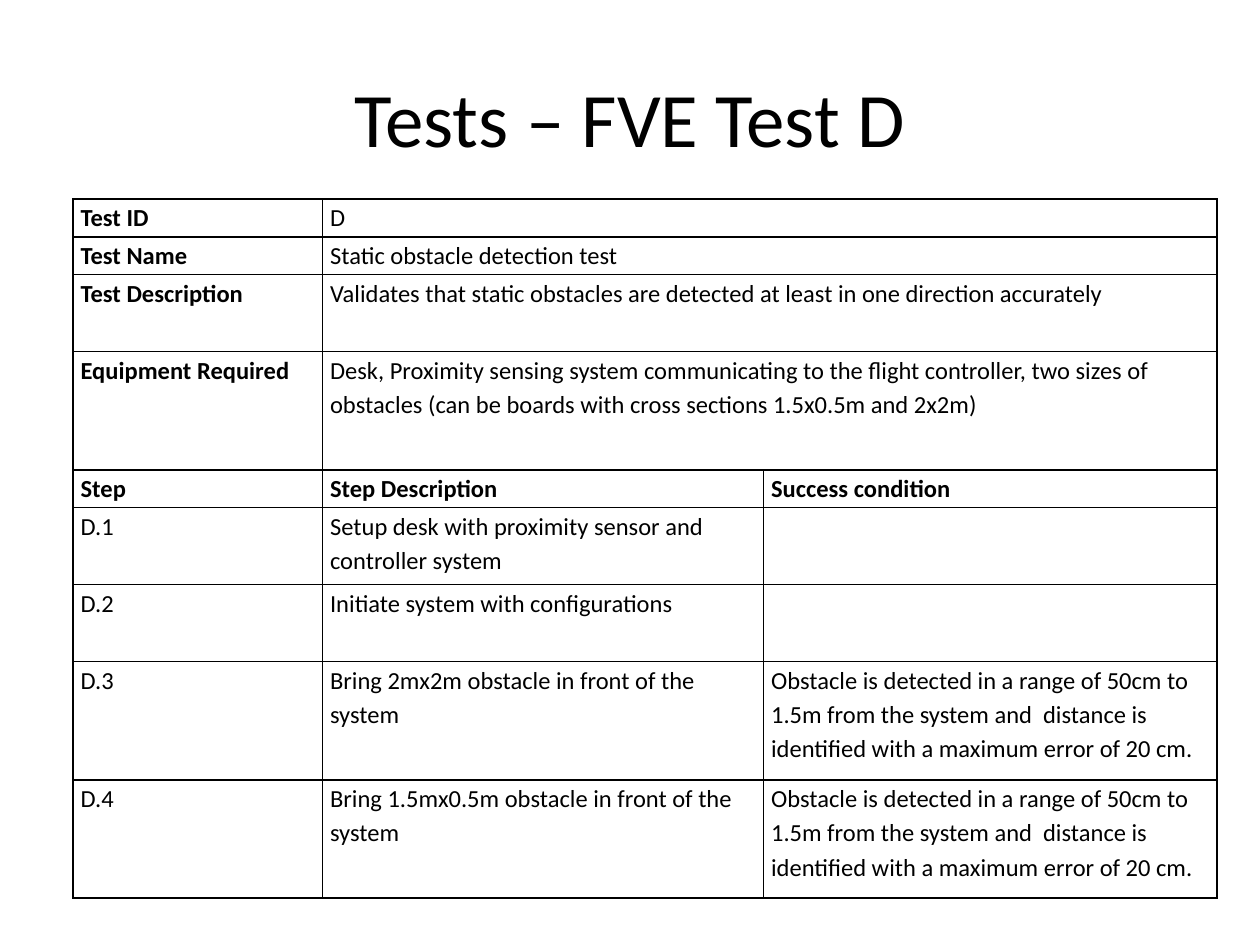
"""Build the FVE Test D slide with its test procedure table."""
from lxml import etree
from pptx import Presentation
from pptx.dml.color import RGBColor
from pptx.enum.text import MSO_ANCHOR, PP_ALIGN
from pptx.oxml.ns import qn
from pptx.util import Inches, Pt

CENTER = PP_ALIGN.CENTER
MIDDLE = MSO_ANCHOR.MIDDLE
TITLE_ONLY = 5
COLORS = {"ink": "000000"}

COLUMN_WIDTHS = [1.98, 3.5, 3.6]
ROW_HEIGHTS = [0.3, 0.3, 0.61, 0.94, 0.3, 0.61, 0.61, 0.94, 0.94]
SUCCESS = (
    "Obstacle is detected in a range of 50cm to 1.5m from the system and  "
    "distance is identified with a maximum error of 20 cm."
)
DETAILS = [
    ("Test ID", "D"),
    ("Test Name", "Static obstacle detection test"),
    ("Test Description",
     "Validates that static obstacles are detected at least in one direction accurately"),
    ("Equipment Required",
     "Desk, Proximity sensing system communicating to the flight controller, "
     "two sizes of obstacles (can be boards with cross sections 1.5x0.5m and 2x2m)"),
]
STEPS = [
    ("Step", "Step Description", "Success condition"),
    ("D.1", "Setup desk with proximity sensor and controller system", ""),
    ("D.2", "Initiate system with configurations", ""),
    ("D.3", "Bring 2mx2m obstacle in front of the system", SUCCESS),
    ("D.4", "Bring 1.5mx0.5m obstacle in front of the system", SUCCESS),
]


class SlideBuilder:
    """Hold the text style and the current slide."""

    font = "Calibri"
    title_size = 44
    body_size = 14

    def __init__(self, page):
        """Keep the page to draw on."""
        self.page = page

    def add_span(self, para, text, size, bold=False):
        """Add one styled run to a paragraph."""
        span = para.add_run()
        span.text = text
        span.font.name = self.font
        span.font.size = Pt(size)
        span.font.bold = bold
        span.font.color.rgb = RGBColor.from_string(COLORS["ink"])

    def title(self, text, left, top, width, height):
        """Place and fill the title placeholder."""
        box = self.page.shapes.title
        box.left, box.top = Inches(left), Inches(top)
        box.width, box.height = Inches(width), Inches(height)
        box.text_frame.vertical_anchor = MIDDLE
        para = box.text_frame.paragraphs[0]
        para.alignment = CENTER
        self.add_span(para, text, self.title_size)

    def border(self, cell):
        """Draw a thin line on all four sides of a cell."""
        properties = cell._tc.get_or_add_tcPr()
        for side in ("a:lnL", "a:lnR", "a:lnT", "a:lnB"):
            line = etree.SubElement(properties, qn(side), w=str(Pt(1)))
            fill = etree.SubElement(line, qn("a:solidFill"))
            etree.SubElement(fill, qn("a:srgbClr"), val=COLORS["ink"])

    def fill_cell(self, cell, text, bold):
        """Style one cell and write its text."""
        cell.margin_left = cell.margin_right = Inches(0.06)
        cell.margin_top = cell.margin_bottom = 0
        self.border(cell)
        cell.fill.background()
        para = cell.text_frame.paragraphs[0]
        para.line_spacing = 1.15
        if text:
            self.add_span(para, text, self.body_size, bold)

    def table(self, left, top, details, steps):
        """Add a table of merged detail rows followed by step rows."""
        rows = [(name, value, "") for name, value in details] + steps
        frame = self.page.shapes.add_table(
            len(rows), len(COLUMN_WIDTHS), Inches(left), Inches(top),
            Inches(sum(COLUMN_WIDTHS)), Inches(sum(ROW_HEIGHTS)))
        table = frame.table
        table.first_row = table.horz_banding = False
        for column, width in zip(table.columns, COLUMN_WIDTHS):
            column.width = Inches(width)
        for row, height in zip(table.rows, ROW_HEIGHTS):
            row.height = Inches(height)
        header = len(details)
        for r, texts in enumerate(rows):
            for c, text in enumerate(texts):
                bold = r == header or (r < header and c == 0)
                self.fill_cell(table.cell(r, c), text, bold)
            if r < header:
                table.cell(r, 1).merge(table.cell(r, 2))


def main():
    """Create and save the deck."""
    deck = Presentation()
    deck.slide_width, deck.slide_height = Inches(10), Inches(7.5)
    page = deck.slides.add_slide(deck.slide_layouts[TITLE_ONLY])
    builder = SlideBuilder(page)
    builder.title("Tests – FVE Test D", 0.5, 0.3, 9, 1.25)
    builder.table(0.58, 1.58, DETAILS, STEPS)
    deck.save("out.pptx")


if __name__ == "__main__":
    main()
